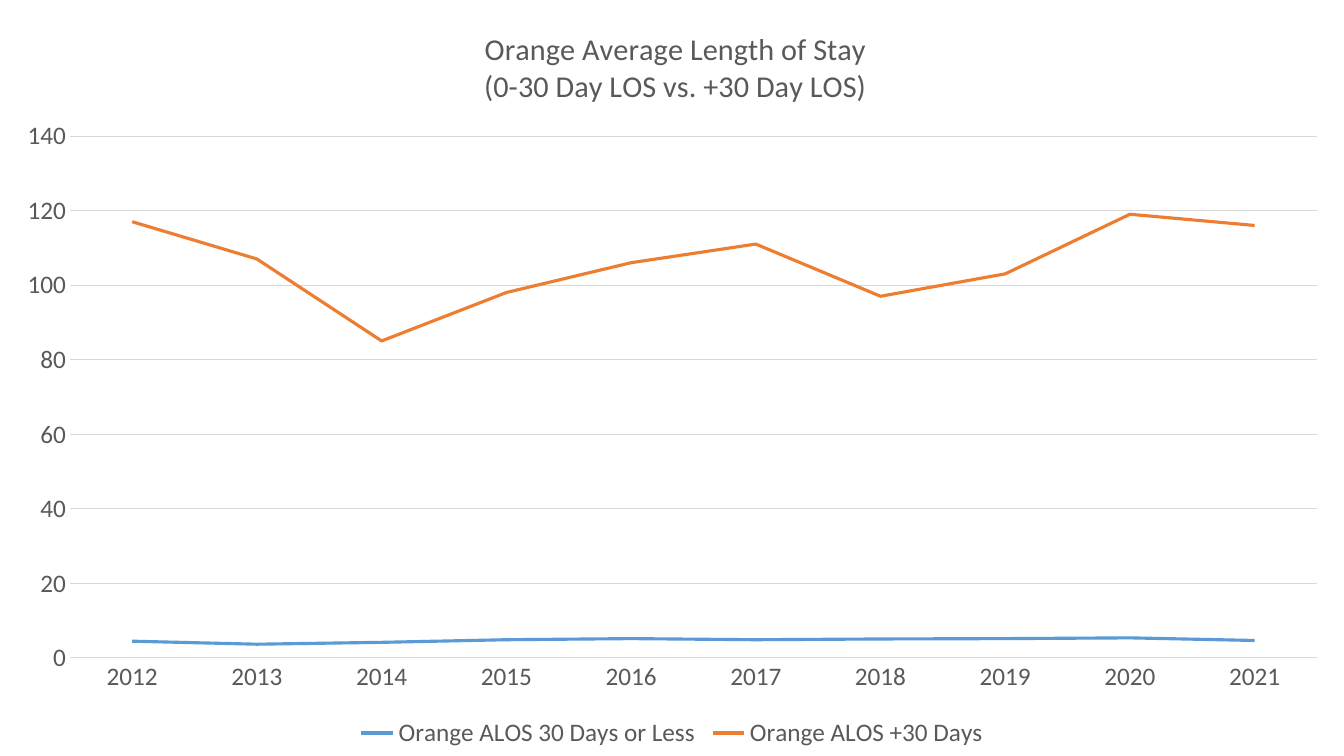
from lxml import etree
from pptx import Presentation
from pptx.chart.data import CategoryChartData
from pptx.dml.color import RGBColor
from pptx.enum.chart import XL_CHART_TYPE, XL_LEGEND_POSITION, XL_TICK_MARK
from pptx.oxml.ns import qn
from pptx.util import Cm, Pt

LINE_CHART = XL_CHART_TYPE.LINE
LEGEND_BOTTOM = XL_LEGEND_POSITION.BOTTOM
NO_TICK = XL_TICK_MARK.NONE

COLORS = {
    "text": "595959",
    "grid": "D9D9D9",
    "short_stay": "5B9BD5",
    "long_stay": "ED7D31",
}
WIDTH, HEIGHT = Cm(33.87), Cm(19.05)
TITLE_LINES = ["Orange Average Length of Stay", "(0-30 Day LOS vs. +30 Day LOS)"]
YEARS = [str(year) for year in range(2012, 2022)]
STAYS = [
    ("Orange ALOS 30 Days or Less", "short_stay",
     [4.4, 3.6, 4.1, 4.8, 5.1, 4.8, 5, 5.1, 5.3, 4.6]),
    ("Orange ALOS +30 Days", "long_stay",
     [117, 107, 85, 98, 106, 111, 97, 103, 119, 116]),
]


def format_font(font, size=18, color="text", name="Calibri"):
    """Apply size, colour and typeface to a font."""
    font.size = Pt(size)
    font.bold = False
    font.name = name
    font.color.rgb = RGBColor.from_string(COLORS[color])


def write_text(frame, lines, **style):
    """Write one formatted paragraph for each line."""
    for index, line in enumerate(lines):
        para = frame.add_paragraph() if index else frame.paragraphs[0]
        span = para.add_run()
        span.text = line
        format_font(span.font, **style)


def format_line(line, color, width):
    """Set the colour and width of a line."""
    line.color.rgb = RGBColor.from_string(COLORS[color])
    line.width = Pt(width)


def place(element, index, **settings):
    """Give a chart part a manual layout in fractions of the chart."""
    for previous in element.findall(qn("c:layout")):
        element.remove(previous)
    layout = etree.Element(qn("c:layout"))
    manual = etree.SubElement(layout, qn("c:manualLayout"))
    for key, value in settings.items():
        etree.SubElement(manual, qn(f"c:{key}")).set("val", str(value))
    element.insert(index, layout)


class StayPage:
    """Hold the style and the current slide."""

    def __init__(self, deck):
        """Add an empty page to the deck."""
        self.page = deck.slides.add_slide(deck.slide_layouts[6])

    def add_line_chart(self, categories, rows):
        """Add a line chart that fills the page."""
        data = CategoryChartData(number_format="0")
        data.categories = categories
        for name, _, values in rows:
            data.add_series(name, values)
        frame = self.page.shapes.add_chart(LINE_CHART, 0, 0, WIDTH, HEIGHT, data)
        chart = frame.chart
        format_font(chart.font)
        chart.plots[0].vary_by_categories = False
        for series, (_, color, _) in zip(chart.plots[0].series, rows):
            series.smooth = False
            format_line(series.format.line, color, 2.25)
        plot_area = chart.element.find(f".//{qn('c:plotArea')}")
        place(plot_area, 0, layoutTarget="inner", xMode="edge", yMode="edge",
              x=0.052, y=0.18, w=0.928, h=0.69)
        return chart

    def add_title(self, chart, lines):
        """Give the chart its title."""
        title = chart.chart_title
        write_text(title.text_frame, lines, size=21.6)
        title.include_in_layout = False
        place(title._element, 1, xMode="edge", yMode="edge", x=0.358, y=0.034)

    def add_axes(self, chart):
        """Format both axes and the gridlines."""
        for axis in (chart.category_axis, chart.value_axis):
            axis.major_tick_mark = axis.minor_tick_mark = NO_TICK
            format_font(axis.tick_labels.font)
        format_line(chart.category_axis.format.line, "grid", 0.75)
        values = chart.value_axis
        values.minimum_scale, values.maximum_scale, values.major_unit = 0, 140, 20
        values.format.line.fill.background()
        format_line(values.major_gridlines.format.line, "grid", 0.75)

    def add_legend(self, chart):
        """Put the legend below the plot."""
        chart.has_legend = True
        legend = chart.legend
        legend.position = LEGEND_BOTTOM
        legend.include_in_layout = False
        format_font(legend.font)
        place(legend._element, 1, xMode="edge", yMode="edge",
              x=0.262, y=0.95, w=0.476, h=0.05)


def main():
    """Build and save the deck."""
    deck = Presentation()
    deck.slide_width, deck.slide_height = WIDTH, HEIGHT
    page = StayPage(deck)
    chart = page.add_line_chart(YEARS, STAYS)
    page.add_title(chart, TITLE_LINES)
    page.add_axes(chart)
    page.add_legend(chart)
    deck.save("out.pptx")


if __name__ == "__main__":
    main()
